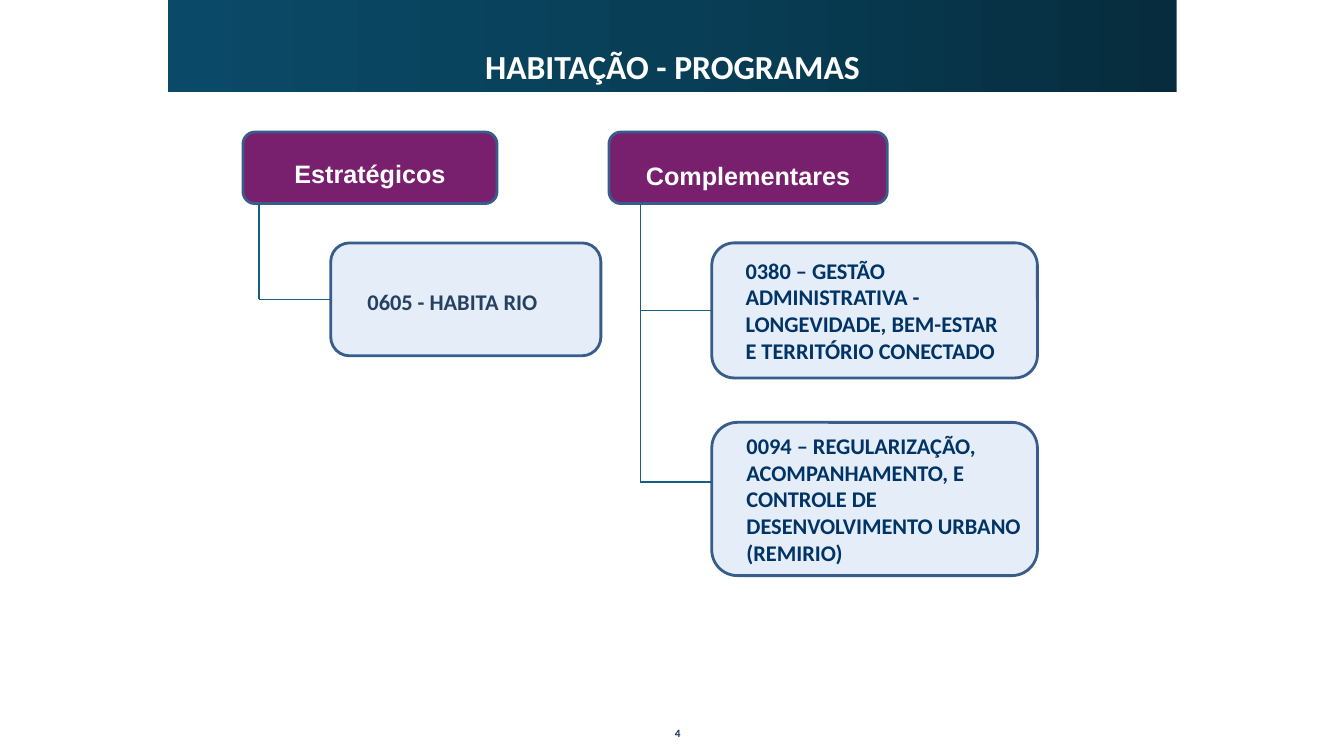
from copy import deepcopy
from dataclasses import dataclass

from lxml.etree import SubElement
from pptx import Presentation
from pptx.dml.color import RGBColor
from pptx.enum.shapes import MSO_CONNECTOR, MSO_SHAPE
from pptx.enum.text import MSO_ANCHOR, PP_ALIGN
from pptx.oxml.ns import qn
from pptx.util import Pt

EMU_PER_PX = 9144


@dataclass(frozen=True)
class Theme:
    """Colours, fonts and type sizes of the slide."""
    banner_stops: tuple = ((0, "062C3D"), (0.5, "083F57"), (1, "0A4A68"))
    white: str = "FFFFFF"
    group_fill: str = "78206E"
    card_fill: str = "E4EDF8"
    border: str = "385D8A"
    branch: str = "156082"
    muted_text: str = "254061"
    card_text: str = "003366"
    number_text: str = "17375E"
    heading_font: str = "Arial"
    body_font: str = "Calibri"
    title_size: int = 24
    group_size: int = 18
    card_size: int = 16
    number_size: int = 8


def px(length):
    """Turn px into EMU."""
    return length * EMU_PER_PX


def apply(target, values):
    """Set every attribute named in values on target."""
    for name, value in values.items():
        setattr(target, name, value)


class SlideBuilder:
    """Draws the elements of one slide in one theme."""

    def __init__(self, slide, theme):
        """Keep the slide and its theme."""
        self.slide = slide
        self.theme = theme

    def set_text(self, shape, text, font, size, color, align=PP_ALIGN.LEFT,
                 anchor=MSO_ANCHOR.MIDDLE, insets=(10, 5, 10, 5), spacing=1.0, wrap=True):
        """Fill a shape with bold text, one paragraph per line."""
        frame = shape.text_frame
        left, top, right, bottom = map(px, insets)
        apply(frame, {"text": text, "word_wrap": wrap, "vertical_anchor": anchor,
                      "margin_left": left, "margin_top": top,
                      "margin_right": right, "margin_bottom": bottom})
        for paragraph in frame.paragraphs:
            apply(paragraph, {"alignment": align, "line_spacing": spacing})
            for run in paragraph.runs:
                apply(run.font, {"name": font, "size": Pt(size), "bold": True})
                run.font.color.rgb = RGBColor.from_string(color)

    def banner(self, box, text):
        """Draw the gradient title banner."""
        theme = self.theme
        shape = self.slide.shapes.add_shape(MSO_SHAPE.RECTANGLE, *map(px, box))
        shape.shadow.inherit = False
        shape.line.fill.background()
        shape.fill.gradient()
        shape.fill.gradient_angle = 180
        stop_list = shape._element.spPr.find(f".//{qn('a:gsLst')}")
        stop_list.append(deepcopy(stop_list[0]))
        for stop, (position, color) in zip(shape.fill.gradient_stops, theme.banner_stops):
            stop.position = position
            stop.color.rgb = RGBColor.from_string(color)
        self.set_text(shape, text, theme.body_font, theme.title_size, theme.white,
                      PP_ALIGN.CENTER, MSO_ANCHOR.BOTTOM, spacing=0.9)

    def rounded(self, box, fill):
        """Draw a bordered rounded rectangle."""
        shape = self.slide.shapes.add_shape(MSO_SHAPE.ROUNDED_RECTANGLE, *map(px, box))
        shape.shadow.inherit = False
        shape.adjustments[0] = 0.167
        shape.fill.solid()
        shape.fill.fore_color.rgb = RGBColor.from_string(fill)
        shape.line.color.rgb = RGBColor.from_string(self.theme.border)
        shape.line.width = Pt(2)
        return shape

    def group(self, box, text, drop):
        """Draw a group heading with its text lowered by half of drop."""
        theme = self.theme
        shape = self.rounded(box, theme.group_fill)
        self.set_text(shape, text, theme.heading_font, theme.group_size, theme.white,
                      PP_ALIGN.CENTER, insets=(0, drop, 0, 0))

    def card(self, box, text, color, insets):
        """Draw a programme card."""
        theme = self.theme
        shape = self.rounded(box, theme.card_fill)
        self.set_text(shape, text, theme.body_font, theme.card_size, color, insets=insets)
        return shape

    def branch(self, start, end, card=None):
        """Draw a thin line, joined to the left side of a card if given."""
        line = self.slide.shapes.add_connector(MSO_CONNECTOR.STRAIGHT,
                                               *map(px, (*start, *end)))
        if card is not None:
            line.end_connect(card, 1)
        line.line.color.rgb = RGBColor.from_string(self.theme.branch)
        line.line.width = Pt(1)
        SubElement(line._element.spPr, qn("a:effectLst"))

    def page_number(self, box, text):
        """Place the page number."""
        theme = self.theme
        shape = self.slide.shapes.add_textbox(*map(px, box))
        self.set_text(shape, text, theme.body_font, theme.number_size, theme.number_text,
                      PP_ALIGN.RIGHT, MSO_ANCHOR.TOP, (0, 0, 0, 0), wrap=False)


def main():
    """Build and save the slide."""
    presentation = Presentation()
    presentation.slide_width, presentation.slide_height = px(1333), px(750)
    theme = Theme()
    builder = SlideBuilder(presentation.slides.add_slide(presentation.slide_layouts[6]), theme)

    builder.banner((167, 0, 1000, 91), "HABITAÇÃO - PROGRAMAS")
    builder.group((241, 131, 252, 71), "Estratégicos", 12)
    builder.group((604, 131, 276, 71), "Complementares", 16)

    housing = builder.card((328, 241, 268, 112), "0605 - HABITA RIO",
                           theme.muted_text, (31, 5, 5, 0))
    management = builder.card(
        (706, 241, 323, 134),
        "0380 – GESTÃO ADMINISTRATIVA - LONGEVIDADE, BEM-ESTAR E TERRITÓRIO CONECTADO",
        theme.card_text, (27, 0, 18, 0))
    builder.card(
        (706, 419, 323, 152),
        "0094 – REGULARIZAÇÃO, ACOMPANHAMENTO, E CONTROLE DE DESENVOLVIMENTO URBANO\n(REMIRIO)",
        theme.card_text, (27, 0, 3, 0))

    builder.branch((257, 202), (257, 297))
    builder.branch((257, 297), (328, 297), housing)
    builder.branch((635, 202), (635, 478))
    builder.branch((635, 308), (706, 308), management)
    builder.branch((635, 478), (706, 478))

    builder.page_number((656, 721, 19, 17), "4")
    presentation.save("out.pptx")


if __name__ == "__main__":
    main()
